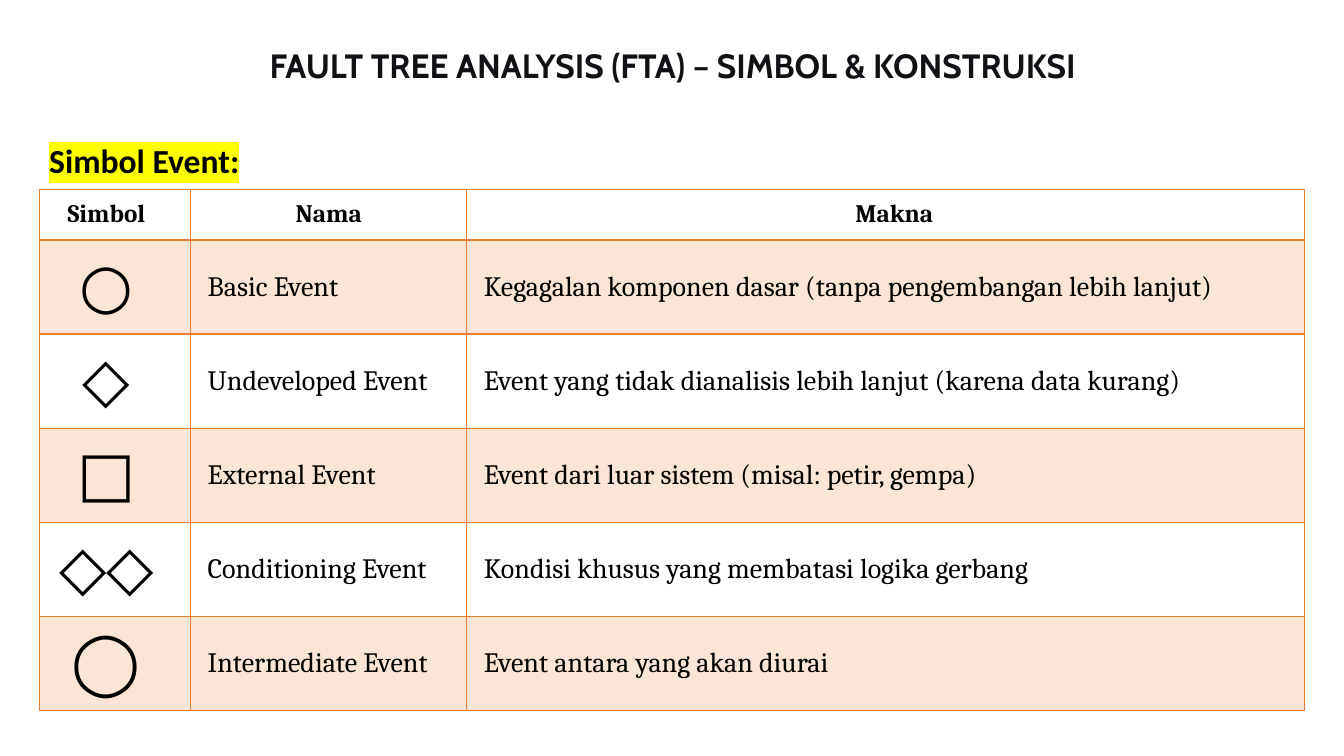
from dataclasses import dataclass

from lxml.etree import SubElement
from pptx import Presentation
from pptx.dml.color import RGBColor
from pptx.enum.text import MSO_ANCHOR, PP_ALIGN
from pptx.oxml import parse_xml
from pptx.oxml.ns import nsdecls, qn
from pptx.slide import Slide
from pptx.table import _Cell
from pptx.text.text import _Paragraph
from pptx.util import Inches, Pt


@dataclass(frozen=True)
class Theme:
    title_color: str = "0F1115"
    text_color: str = "000000"
    accent: str = "ED7D31"
    band: str = "FBE5D6"
    marker: str = "FFFF00"
    title_font: str = "Cabin"
    heading_font: str = "Calibri"
    table_font: str = "Cambria"
    heading_size: int = 24
    header_size: int = 18
    body_size: int = 20
    symbol_size: int = 44


@dataclass(frozen=True)
class Column:
    label: str
    width: float
    left_inset: float
    right_inset: float
    align: PP_ALIGN


@dataclass(frozen=True)
class Event:
    symbol: str
    name: str
    meaning: str
    symbol_bold: bool = True


THEME = Theme()
HEADER_HEIGHT, EVENT_HEIGHT = 0.5, 0.91
COLUMNS = (
    Column("Simbol", 1.5, 0, 0.17, PP_ALIGN.CENTER),
    Column("Nama", 2.74, 0.17, 0.17, PP_ALIGN.LEFT),
    Column("Makna", 8.31, 0.17, 0, PP_ALIGN.JUSTIFY),
)
EVENTS = (
    Event("○", "Basic Event", "Kegagalan komponen dasar (tanpa pengembangan lebih lanjut)"),
    Event("◇", "Undeveloped Event", "Event yang tidak dianalisis lebih lanjut (karena data kurang)"),
    Event("□", "External Event", "Event dari luar sistem (misal: petir, gempa)"),
    Event("◇◇", "Conditioning Event", "Kondisi khusus yang membatasi logika gerbang"),
    Event("◯", "Intermediate Event", "Event antara yang akan diurai"),
)


def style(paragraph: _Paragraph, font: str, size: int, color: str, bold: bool) -> None:
    for run in paragraph.runs:
        run.font.name = font
        run.font.size = Pt(size)
        run.font.bold = bold
        run.font.color.rgb = RGBColor.from_string(color)


def add_title(slide: Slide) -> None:
    title = slide.shapes.add_textbox(Inches(0.92), Inches(0.15), Inches(11.5), Inches(1.45))
    frame = title.text_frame
    frame.word_wrap = True
    frame.vertical_anchor = MSO_ANCHOR.MIDDLE
    frame.margin_bottom = Inches(0.45)
    frame.text = "FAULT TREE ANALYSIS (FTA) – SIMBOL & KONSTRUKSI"
    line = frame.paragraphs[0]
    line.alignment = PP_ALIGN.CENTER
    line.line_spacing = 0.9
    style(line, THEME.title_font, THEME.heading_size, THEME.title_color, True)


def add_heading(slide: Slide) -> None:
    heading = slide.shapes.add_textbox(Inches(0.39), Inches(1.34), Inches(6.67), Inches(0.5))
    frame = heading.text_frame
    frame.word_wrap = True
    frame.text = "Simbol Event:"
    line = frame.paragraphs[0]
    style(line, THEME.heading_font, THEME.heading_size, THEME.text_color, True)
    properties = line.runs[0].font._element
    highlight = SubElement(properties, qn("a:highlight"))
    SubElement(highlight, qn("a:srgbClr"), val=THEME.marker)
    properties.find(qn("a:solidFill")).addnext(highlight)


def set_borders(cell: _Cell, top: float, bottom: float) -> None:
    properties = cell._tc.get_or_add_tcPr()
    sides = (("lnL", 1), ("lnR", 1), ("lnT", top), ("lnB", bottom))
    for position, (side, width) in enumerate(sides):
        properties.insert(position, parse_xml(
            f'<a:{side} {nsdecls("a")} w="{Pt(width)}"><a:solidFill>'
            f'<a:srgbClr val="{THEME.accent}"/></a:solidFill></a:{side}>'))


def fill_cell(cell: _Cell, column: Column, text: str, align: PP_ALIGN,
              size: int, bold: bool, banded: bool) -> None:
    cell.margin_left, cell.margin_right = Inches(column.left_inset), Inches(column.right_inset)
    cell.margin_top = cell.margin_bottom = Inches(0.1)
    cell.vertical_anchor = MSO_ANCHOR.MIDDLE
    cell.text_frame.text = text
    line = cell.text_frame.paragraphs[0]
    line.alignment = align
    line.space_after = Pt(8)
    style(line, THEME.table_font, size, THEME.text_color, bold)
    if banded:
        cell.fill.solid()
        cell.fill.fore_color.rgb = RGBColor.from_string(THEME.band)
    else:
        cell.fill.background()


def add_event_table(slide: Slide) -> None:
    height = HEADER_HEIGHT + EVENT_HEIGHT * len(EVENTS)
    width = sum(column.width for column in COLUMNS)
    table = slide.shapes.add_table(len(EVENTS) + 1, len(COLUMNS), Inches(0.39), Inches(1.88),
                                   Inches(width), Inches(height)).table
    table.first_row = table.horz_banding = False
    table.rows[0].height = Inches(HEADER_HEIGHT)
    for c, column in enumerate(COLUMNS):
        table.columns[c].width = Inches(column.width)
        header = table.cell(0, c)
        fill_cell(header, column, column.label, PP_ALIGN.CENTER, THEME.header_size, True, False)
        set_borders(header, 1, 2)
    for r, event in enumerate(EVENTS, start=1):
        table.rows[r].height = Inches(EVENT_HEIGHT)
        for c, (column, text) in enumerate(zip(COLUMNS, (event.symbol, event.name, event.meaning))):
            cell = table.cell(r, c)
            is_symbol = c == 0
            size = THEME.symbol_size if is_symbol else THEME.body_size
            fill_cell(cell, column, text, column.align, size,
                      is_symbol and event.symbol_bold, r % 2 == 1)
            set_borders(cell, 2 if r == 1 else 1, 1)


def main() -> None:
    deck = Presentation()
    deck.slide_width, deck.slide_height = Inches(13.33), Inches(7.5)
    slide = deck.slides.add_slide(deck.slide_layouts[6])
    add_title(slide)
    add_event_table(slide)
    add_heading(slide)
    deck.save("out.pptx")


if __name__ == "__main__":
    main()
